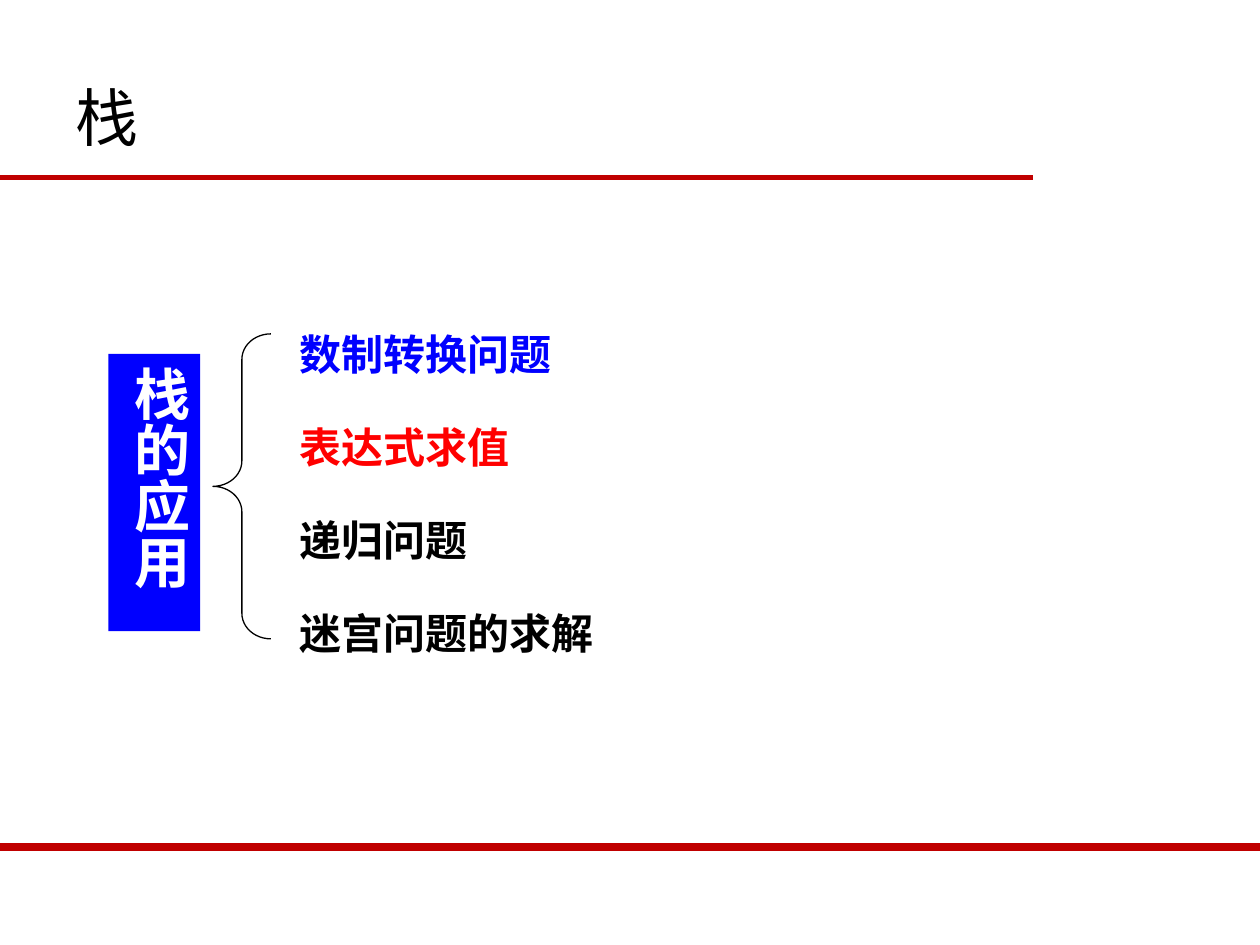
from lxml import etree
from pptx import Presentation
from pptx.dml.color import RGBColor
from pptx.enum import shapes, text
from pptx.oxml import ns
from pptx.util import Inches, Pt

HUES = {"rule": "C00000", "blue": "0000FF", "red": "FF0000",
        "black": "000000", "white": "FFFFFF"}
ITEMS = [("数制转换问题", "blue"), ("表达式求值", "red"),
         ("递归问题", "black"), ("迷宫问题的求解", "black")]
CJK = "Noto Sans CJK SC"


def hue(name):
    return RGBColor.from_string(HUES[name])


def write(shape, words, size=24, font="Calibri", color="black", bold=False,
          anchor=text.MSO_ANCHOR.TOP):
    frame = shape.text_frame
    frame.word_wrap = True
    frame.vertical_anchor = anchor
    para = frame.paragraphs[0]
    para.alignment = text.PP_ALIGN.LEFT
    run = para.add_run()
    run.text = words
    run.font.size = Pt(size)
    run.font.bold = bold
    run.font.color.rgb = hue(color)
    run.font.name = font
    east = etree.SubElement(run.font._element, ns.qn("a:ea"))
    east.set("typeface", CJK)


def place(shape, left, top, width, height):
    shape.left, shape.top = Inches(left), Inches(top)
    shape.width, shape.height = Inches(width), Inches(height)


def add_rule(slide, top, width, weight):
    rule = slide.shapes.add_connector(
        shapes.MSO_CONNECTOR.STRAIGHT, 0, Inches(top), Inches(width), Inches(top))
    rule.line.color.rgb = hue("rule")
    rule.line.width = Pt(weight)
    etree.SubElement(rule._element.spPr, ns.qn("a:effectLst"))


def add_label(slide):
    label = slide.shapes.add_shape(
        shapes.MSO_SHAPE.RECTANGLE, Inches(0.86), Inches(2.81),
        Inches(0.73), Inches(2.2))
    label.shadow.inherit = False
    label.fill.solid()
    label.fill.fore_color.rgb = hue("blue")
    label.line.fill.background()
    write(label, "栈的应用", size=32, font="Comic Neue", color="white", bold=True)
    label.text_frame._txBody.bodyPr.set("vert", "eaVert")


def add_brace(slide):
    brace = slide.shapes.add_shape(
        shapes.MSO_SHAPE.LEFT_BRACE, Inches(1.69), Inches(2.65),
        Inches(0.46), Inches(2.42))
    brace.shadow.inherit = False
    brace.adjustments[0] = 0.44
    brace.fill.background()
    brace.line.color.rgb = hue("black")
    brace.line.width = Pt(0.75)


def add_items(slide):
    first, last = 2.56, 4.77
    step = (last - first) / (len(ITEMS) - 1)
    for i, (words, color) in enumerate(ITEMS):
        box = slide.shapes.add_textbox(
            Inches(2.28), Inches(first + i * step), Inches(2.58), Inches(0.5))
        write(box, words, color=color, bold=True)


def main():
    deck = Presentation()
    deck.slide_width, deck.slide_height = Inches(10), Inches(7.5)
    slide = deck.slides.add_slide(deck.slide_layouts[5])
    add_rule(slide, 1.41, 8.2, 3)
    add_rule(slide, 6.72, 10, 4.5)
    title = slide.shapes.title
    place(title, 0.5, 0.3, 9, 1.25)
    write(title, "栈", size=36, font=CJK, anchor=text.MSO_ANCHOR.MIDDLE)
    add_label(slide)
    add_brace(slide)
    add_items(slide)
    deck.save("out.pptx")


if __name__ == "__main__":
    main()
